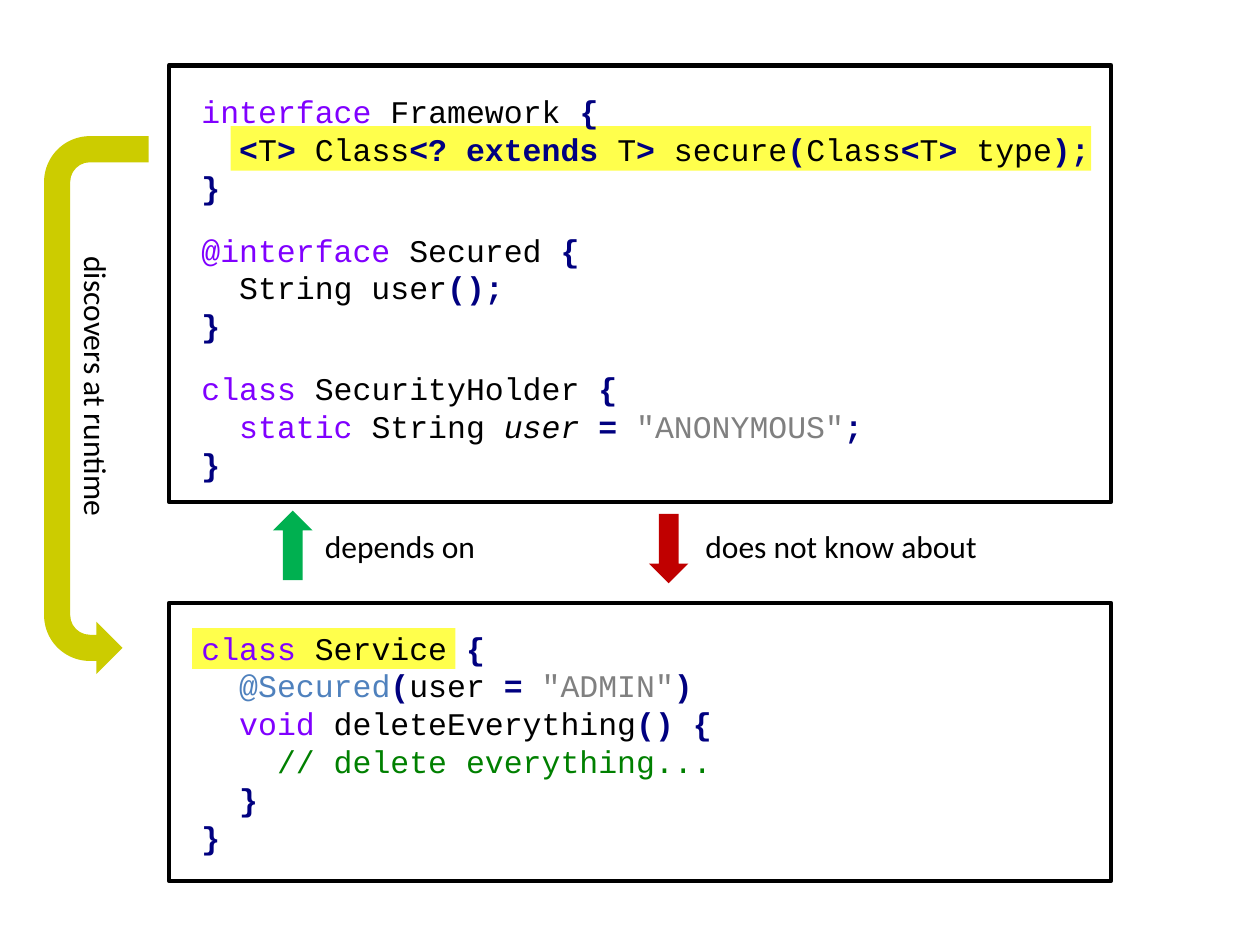
from lxml import etree
from pptx import Presentation
from pptx.dml.color import RGBColor
from pptx.enum import shapes, text
from pptx.oxml.ns import qn
from pptx.util import Pt

BLACK = RGBColor(0x00, 0x00, 0x00)
PURPLE = RGBColor(0x80, 0x00, 0xFF)
NAVY = RGBColor(0x00, 0x00, 0x80)
GREY = RGBColor(0x80, 0x80, 0x80)
BLUE = RGBColor(0x4F, 0x81, 0xBD)
LEAF = RGBColor(0x00, 0x80, 0x00)
YELLOW = RGBColor(0xFF, 0xFF, 0x00)
GREEN = RGBColor(0x00, 0xB0, 0x50)
RED = RGBColor(0xC0, 0x00, 0x00)
OLIVE = RGBColor(0xCC, 0xCC, 0x00)

KIND = shapes.MSO_SHAPE
INKS = {"word": PURPLE, "sign": NAVY, "name": BLACK, "field": BLACK,
        "quote": GREY, "mark": BLUE, "note": LEAF}
STEP = 10.8
LEFT = 108

CLOSE = (0, [("sign", "}")])
FRAME = [
    (0, [("word", "interface"), ("name", " Framework "), ("sign", "{")]),
    (2, [("sign", "<"), ("name", "T"), ("sign", "> "), ("name", "Class"),
         ("sign", "<? extends "), ("name", "T"), ("sign", ">"),
         ("name", " secure"), ("sign", "("), ("name", "Class"),
         ("sign", "<"), ("name", "T"), ("sign", ">"), ("name", " type"),
         ("sign", ");")]),
    CLOSE,
]
SECURED = [
    (0, [("word", "@interface"), ("name", " Secured "), ("sign", "{")]),
    (2, [("name", "String user"), ("sign", "();")]),
    CLOSE,
]
HOLDER = [
    (0, [("word", "class"), ("name", " SecurityHolder "), ("sign", "{")]),
    (2, [("word", "static"), ("name", " String "), ("field", "user "),
         ("sign", "= "), ("quote", '"ANONYMOUS"'), ("sign", ";")]),
    CLOSE,
]
SERVICE = [
    (0, [("word", "class"), ("name", " Service "), ("sign", "{")]),
    (2, [("mark", "@Secured"), ("sign", "("), ("name", "user "),
         ("sign", "= "), ("quote", '"ADMIN"'), ("sign", ")")]),
    (2, [("word", "void"), ("name", " deleteEverything"), ("sign", "() {")]),
    (4, [("note", "// delete everything...")]),
    (2, [("sign", "}")]),
    CLOSE,
]


def add_shape(slide, kind, box, fill=None, alpha=None):
    shape = slide.shapes.add_shape(kind, *map(Pt, box))
    shape.shadow.inherit = False
    shape.line.fill.background()
    if fill is None:
        shape.fill.background()
    else:
        shape.fill.solid()
        shape.fill.fore_color.rgb = fill
    if alpha:
        tone = shape.fill._xPr.find(".//" + qn("a:srgbClr"))
        etree.SubElement(tone, qn("a:alpha"), val=str(alpha * 1000))
    return shape


def add_frame(slide, top, height):
    frame = add_shape(slide, KIND.RECTANGLE, (96.5, top, 538.5, height))
    frame.line.color.rgb = BLACK
    frame.line.width = Pt(2.5)


def add_box(slide, box, wrap=True):
    shape = slide.shapes.add_textbox(*map(Pt, box))
    shape.text_frame.word_wrap = wrap
    shape.text_frame.auto_size = text.MSO_AUTO_SIZE.SHAPE_TO_FIT_TEXT
    return shape


def set_font(para, name):
    para.font.name = name
    para.font.size = Pt(18)


def add_code(slide, top, width, lines):
    body = add_box(slide, (LEFT, top, width, 21.6 * len(lines) + 7.2)).text_frame
    for row, (indent, parts) in enumerate(lines):
        para = body.add_paragraph() if row else body.paragraphs[0]
        set_font(para, "Courier New")
        para._p.get_or_add_pPr().set("marL", str(Pt(indent * STEP)))
        for kind, words in parts:
            run = para.add_run()
            run.text = words
            run.font.color.rgb = INKS[kind]
            run.font.bold = kind == "sign"
            run.font.italic = kind == "field"


def add_label(slide, words, box, wrap=False, turn=0):
    label = add_box(slide, box, wrap)
    label.rotation = turn
    para = label.text_frame.paragraphs[0]
    para.text = words
    set_font(para, "Calibri")
    para.font.color.rgb = BLACK


def add_turn(slide, box):
    arrow = add_shape(slide, KIND.U_TURN_ARROW, box, OLIVE)
    arrow.rotation = 270
    arrow._element.spPr.find(qn("a:xfrm")).set("flipH", "1")


def main():
    deck = Presentation()
    deck.slide_width, deck.slide_height = Pt(720), Pt(540)
    slide = deck.slides.add_slide(deck.slide_layouts[6])

    add_shape(slide, KIND.RECTANGLE, (131.8, 72, 491.8, 25.6), YELLOW, 70)
    add_code(slide, 49, 527, FRAME)
    add_shape(slide, KIND.RECTANGLE, (109.8, 359, 150.5, 23.3), YELLOW, 70)
    add_code(slide, 355.7, 467, SERVICE)
    add_code(slide, 128.2, 360, SECURED)
    add_code(slide, 207.4, 402.5, HOLDER)

    add_frame(slide, 37.4, 249.4)
    add_frame(slide, 344.6, 158.8)

    add_shape(slide, KIND.UP_ARROW, (156, 291.8, 22.6, 39.7), GREEN)
    add_shape(slide, KIND.DOWN_ARROW, (370.8, 293.6, 22.6, 39.7), RED)
    add_label(slide, "does not know about", (396, 297.7, 179.3, 29), True)
    add_label(slide, "depends on", (178.6, 297.4, 101.5, 29))
    add_turn(slide, (-98.6, 201.6, 307.4, 59.8))
    add_label(slide, "discovers at runtime", (-27.4, 207.4, 164.9, 29), turn=90)
    deck.save("out.pptx")


if __name__ == "__main__":
    main()
